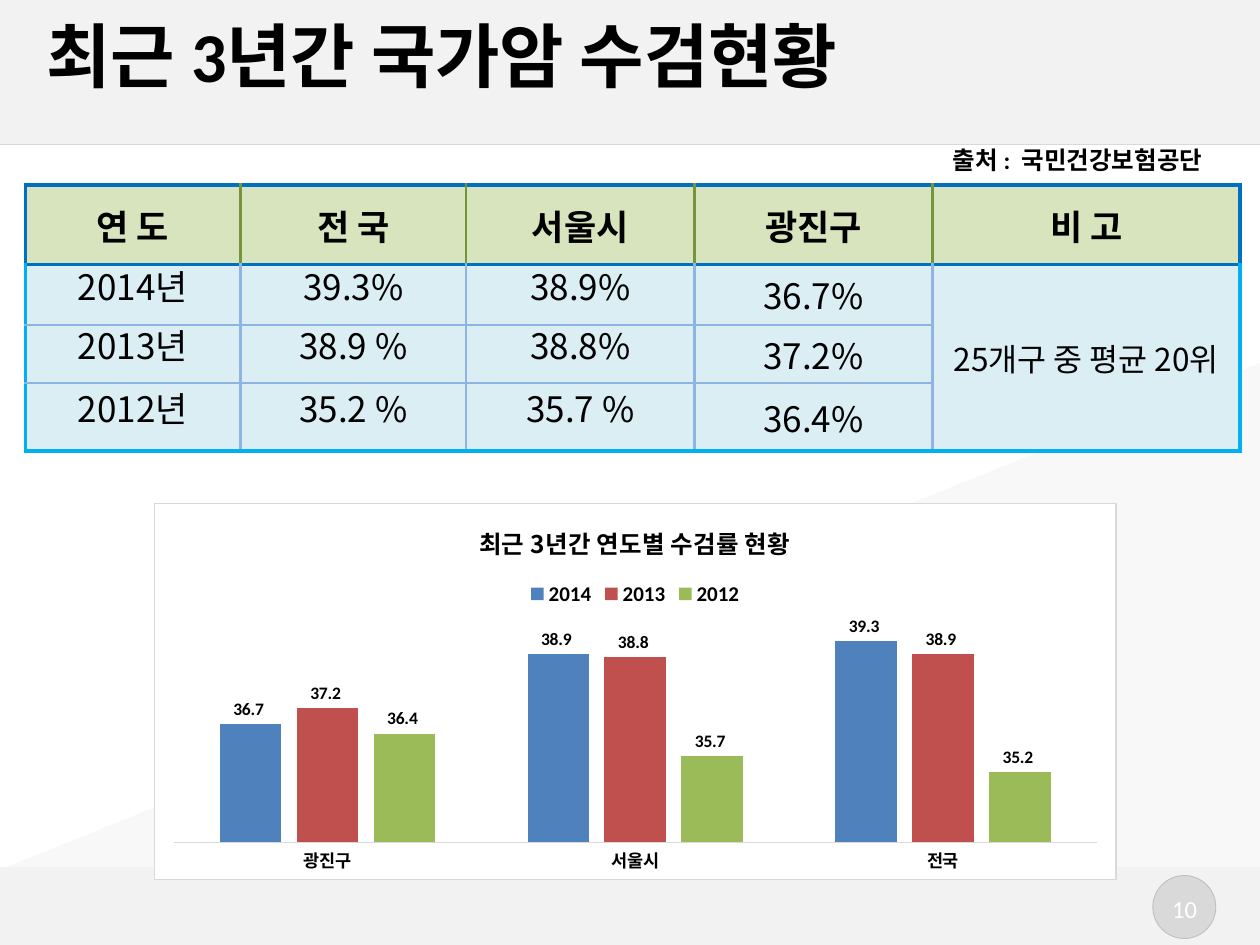
from dataclasses import dataclass
from typing import Any, Optional

from lxml.etree import SubElement
from pptx import Presentation
from pptx.chart.data import CategoryChartData
from pptx.dml.color import RGBColor
from pptx.enum.chart import XL_CHART_TYPE as ChartKind
from pptx.enum.chart import XL_LABEL_POSITION as LabelSpot
from pptx.enum.chart import XL_LEGEND_POSITION as LegendSpot
from pptx.enum.chart import XL_TICK_LABEL_POSITION as TickLabelSpot
from pptx.enum.chart import XL_TICK_MARK as TickMark
from pptx.enum.shapes import MSO_CONNECTOR as Connector
from pptx.enum.shapes import MSO_SHAPE as Preset
from pptx.enum.text import MSO_ANCHOR as Anchor
from pptx.enum.text import MSO_AUTO_SIZE as AutoSize
from pptx.enum.text import PP_ALIGN as Align
from pptx.oxml import parse_xml
from pptx.oxml.ns import nsdecls, qn
from pptx.util import Cm, Pt


@dataclass(frozen=True)
class Theme:
    """Colours, fonts and type sizes of the slide."""
    latin: str = "Calibri"
    korean: str = "Noto Sans CJK KR"
    ink: str = "000000"
    white: str = "FFFFFF"
    band: str = "F2F2F2"
    rule: str = "D9D9D9"
    ring: str = "BFBFBF"
    head_fill: str = "D7E4BD"
    head_inner: str = "77933C"
    head_outer: str = "0070C0"
    body_fill: str = "DBEEF4"
    body_inner: str = "8EB4E3"
    body_outer: str = "00B0F0"
    series: tuple = ("4F81BD", "C0504D", "9BBB59")
    title: int = 40
    cell: int = 20
    remark: int = 18
    note: int = 14
    legend: int = 12
    label: int = 10


@dataclass(frozen=True)
class Box:
    """A frame in centimetres."""
    left: float
    top: float
    width: float
    height: float

    def lengths(self) -> tuple:
        """Return the four lengths for an add method."""
        return tuple(Cm(v) for v in (self.left, self.top, self.width, self.height))


@dataclass(frozen=True)
class Panel:
    """A filled preset shape."""
    kind: Any
    box: Box
    fill: str
    line: Optional[str] = None


@dataclass(frozen=True)
class Label:
    """A one-line text."""
    text: str
    box: Box
    color: str
    bold: bool = False
    align: Any = Align.CENTER
    wrap: bool = False


THEME = Theme()
FOOTER = Panel(Preset.RECTANGLE, Box(0, 17.48, 25.4, 1.57), THEME.band)
NUMBER_DISC = Panel(Preset.OVAL, Box(23.24, 17.65, 1.27, 1.27), THEME.rule, THEME.ring)
HEADER = Panel(Preset.RECTANGLE, Box(0, 0, 25.4, 2.92), THEME.band)
SLOPE = Panel(Preset.RIGHT_TRIANGLE, Box(0, 7.32, 25.4, 10.21), THEME.band)
LABELS = (
    Label("10", Box(23.32, 17.88, 1.12, 0.86), THEME.white),
    Label("출처 :  국민건강보험공단", Box(0.89, 2.92, 23.6, 0.61), THEME.ink, True, Align.RIGHT, True),
)
TITLE_BOX = Box(0.94, 0.33, 23.55, 1.52)
TABLE_BOX = Box(0.51, 3.73, 24.49, 5.36)
CHART_BOX = Box(3.1, 10.13, 19.41, 7.62)
COLUMN_WIDTHS = (4.34, 4.55, 4.6, 4.8, 6.2)
ROW_HEIGHTS = (1.6, 1.22, 1.17, 1.37)
ROWS = (
    ("연 도", "전 국", "서울시", "광진구", "비 고"),
    ("2014년", "39.3%", "38.9%", "36.7%", "25개구 중 평균 20위"),
    ("2013년", "38.9 %", "38.8%", "37.2%", ""),
    ("2012년", "35.2 %", "35.7 %", "36.4%", ""),
)
REGIONS = ("광진구", "서울시", "전국")
RATES = {"2014": (36.7, 38.9, 39.3), "2013": (37.2, 38.8, 38.9), "2012": (36.4, 35.7, 35.2)}


def apply(target: Any, **formats: Any) -> None:
    """Set every format value on the target."""
    for name, value in formats.items():
        setattr(target, name, value)


def style_font(font: Any, size: float, color: str, bold: bool = False, name: str = THEME.latin) -> None:
    """Give a font its face, size, weight and colour."""
    apply(font, size=Pt(size), bold=bold, name=name)
    font.color.rgb = RGBColor.from_string(color)


def paint(target: Any, color: str) -> None:
    """Fill a target with a solid colour."""
    target.fill.solid()
    target.fill.fore_color.rgb = RGBColor.from_string(color)


def stroke(line: Any, color: str, width: float) -> None:
    """Give a line its colour and width."""
    line.color.rgb = RGBColor.from_string(color)
    line.width = Pt(width)


def add_panel(page: Any, panel: Panel) -> Any:
    """Draw a filled shape without shadow."""
    shape = page.shapes.add_shape(panel.kind, *panel.box.lengths())
    shape.shadow.inherit = False
    paint(shape, panel.fill)
    if panel.line:
        stroke(shape.line, panel.line, 0.5)
    else:
        shape.line.fill.background()
    return shape


def add_label(page: Any, label: Label) -> None:
    """Write a one-line text box."""
    frame = page.shapes.add_textbox(*label.box.lengths()).text_frame
    apply(frame, word_wrap=label.wrap, vertical_anchor=Anchor.MIDDLE)
    para = frame.paragraphs[0]
    para.alignment = label.align
    span = para.add_run()
    span.text = label.text
    style_font(span.font, THEME.note, label.color, label.bold)


def add_backdrop(page: Any) -> None:
    """Draw the footer, header band, rule and slope."""
    for panel in (FOOTER, NUMBER_DISC, HEADER):
        add_panel(page, panel)
    rule = page.shapes.add_connector(Connector.STRAIGHT, 0, Cm(2.92), Cm(25.4), Cm(2.92))
    stroke(rule.line, THEME.rule, 0.75)
    SubElement(rule.element.spPr, qn("a:effectLst"))
    slope = add_panel(page, SLOPE).element.spPr
    slope.find(qn("a:xfrm")).set("flipH", "1")
    SubElement(slope.find(f"{qn('a:solidFill')}/{qn('a:srgbClr')}"), qn("a:alpha"), val="50000")


def place_title(page: Any) -> None:
    """Format the title placeholder and lift it above the header band."""
    title = page.shapes.title
    apply(title, **dict(zip(("left", "top", "width", "height"), TITLE_BOX.lengths())))
    title.element.getparent().append(title.element)
    frame = title.text_frame
    frame.text = "최근 3년간 국가암 수검현황"
    apply(frame, auto_size=AutoSize.NONE, word_wrap=True, vertical_anchor=Anchor.MIDDLE,
          margin_left=0, margin_top=0, margin_right=0, margin_bottom=0)
    para = frame.paragraphs[0]
    para.alignment = Align.LEFT
    style_font(para.runs[0].font, THEME.title, THEME.ink, True)


def border_cell(cell: Any, row: int, column: int) -> None:
    """Draw the four cell borders, heavier on the outside and around the header."""
    last_row, last_column = len(ROWS) - 1, len(COLUMN_WIDTHS) - 1
    inner, outer = ((THEME.body_inner, 1.5), (THEME.body_outer, 2.25))
    header = (THEME.head_outer, 2.25)
    if row == 0:
        inner, outer = (THEME.head_inner, 1.5), header
    closes = row == last_row or column == last_column
    sides = {
        "L": outer if column == 0 else inner,
        "R": outer if column == last_column else inner,
        "T": header if row <= 1 else inner,
        "B": outer if row == 0 or closes else inner,
    }
    for side, (color, width) in sides.items():
        line = SubElement(cell._tc.get_or_add_tcPr(), qn(f"a:ln{side}"), w=str(int(Pt(width))))
        SubElement(SubElement(line, qn("a:solidFill")), qn("a:srgbClr"), val=color)


def add_rate_table(page: Any) -> None:
    """Build the table of screening rates."""
    table = page.shapes.add_table(len(ROWS), len(COLUMN_WIDTHS), *TABLE_BOX.lengths()).table
    table.horz_banding = False
    for column, width in zip(table.columns, COLUMN_WIDTHS):
        column.width = Cm(width)
    for row, height in zip(table.rows, ROW_HEIGHTS):
        row.height = Cm(height)
    table.cell(1, 4).merge(table.cell(3, 4))
    for r, texts in enumerate(ROWS):
        for c, text in enumerate(texts):
            cell = table.cell(r, c)
            border_cell(cell, r, c)
            paint(cell, THEME.body_fill if r else THEME.head_fill)
            apply(cell, vertical_anchor=Anchor.MIDDLE, margin_left=Cm(0.05), margin_right=Cm(0.05),
                  margin_top=Cm(0.05), margin_bottom=Cm(0.05))
            if not text:
                continue
            cell.text = text
            para = cell.text_frame.paragraphs[0]
            apply(para, alignment=Align.CENTER, line_spacing=Pt(18) if r and c < 3 else None)
            size = THEME.remark if r and c == 4 else THEME.cell
            style_font(para.runs[0].font, size, THEME.ink, r == 0, THEME.korean)


def add_rate_chart(page: Any) -> None:
    """Build the clustered column chart of rates by region."""
    data = CategoryChartData(number_format="0.0_ ")
    data.categories = REGIONS
    for year, rates in RATES.items():
        data.add_series(year, rates)
    chart = page.shapes.add_chart(ChartKind.COLUMN_CLUSTERED, *CHART_BOX.lengths(), data).chart
    style_font(chart.font, THEME.label, THEME.ink)
    chart.element.find(qn("c:chart")).addnext(parse_xml(
        f'<c:spPr {nsdecls("c", "a")}><a:solidFill><a:srgbClr val="{THEME.white}"/></a:solidFill>'
        f'<a:ln w="9525"><a:solidFill><a:srgbClr val="{THEME.rule}"/></a:solidFill></a:ln></c:spPr>'))
    heading = chart.chart_title.text_frame
    heading.text = "최근 3년간 연도별 수검률 현황"
    style_font(heading.paragraphs[0].runs[0].font, THEME.note, THEME.ink, True, THEME.korean)
    chart.has_legend = True
    apply(chart.legend, position=LegendSpot.TOP, include_in_layout=False)
    style_font(chart.legend.font, THEME.legend, THEME.ink, True)
    apply(chart.value_axis, minimum_scale=33, maximum_scale=40, has_major_gridlines=False, visible=False)
    axis = chart.category_axis
    apply(axis, major_tick_mark=TickMark.NONE, minor_tick_mark=TickMark.NONE,
          tick_label_position=TickLabelSpot.NEXT_TO_AXIS)
    stroke(axis.format.line, THEME.rule, 0.75)
    style_font(axis.tick_labels.font, THEME.label, THEME.ink, True)
    plot = chart.plots[0]
    apply(plot, gap_width=150, overlap=-25, vary_by_categories=False)
    for series, color in zip(plot.series, THEME.series):
        paint(series.format, color)
        labels = series.data_labels
        apply(labels, show_value=True, number_format="0.0_ ", number_format_is_linked=False,
              position=LabelSpot.OUTSIDE_END)
        style_font(labels.font, THEME.label, THEME.ink, True)


def main() -> None:
    """Build the slide and save the deck."""
    deck = Presentation()
    apply(deck, slide_width=Cm(25.4), slide_height=Cm(19.05))
    page = deck.slides.add_slide(deck.slide_layouts[5])
    add_backdrop(page)
    place_title(page)
    for label in LABELS:
        add_label(page, label)
    add_rate_table(page)
    add_rate_chart(page)
    deck.save("out.pptx")


if __name__ == "__main__":
    main()
